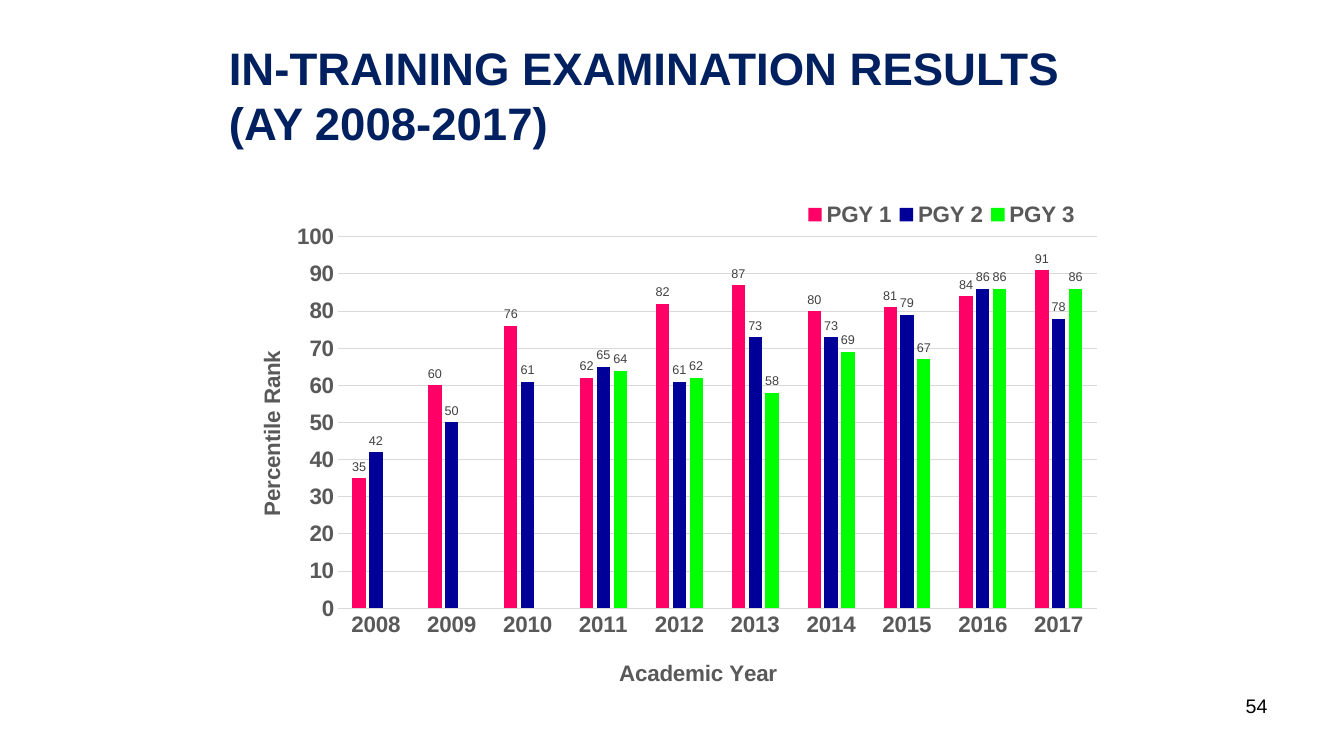
from dataclasses import dataclass

from lxml import etree
from pptx import Presentation
from pptx.chart.data import CategoryChartData
from pptx.dml.color import RGBColor
from pptx.enum.chart import XL_CHART_TYPE, XL_LABEL_POSITION, XL_LEGEND_POSITION, XL_TICK_MARK
from pptx.enum.text import MSO_ANCHOR, PP_ALIGN
from pptx.oxml.ns import qn
from pptx.util import Inches, Pt

CLUSTERED = XL_CHART_TYPE.COLUMN_CLUSTERED
OUTSIDE_END = XL_LABEL_POSITION.OUTSIDE_END
LEGEND_BOTTOM = XL_LEGEND_POSITION.BOTTOM
NO_TICK = XL_TICK_MARK.NONE
BOTTOM, TOP = MSO_ANCHOR.BOTTOM, MSO_ANCHOR.TOP
LEFT, RIGHT = PP_ALIGN.LEFT, PP_ALIGN.RIGHT


@dataclass(frozen=True)
class Theme:
    """Colours and type sizes of the slide."""
    font: str = "Arial"
    heading: str = "002060"
    number: str = "000000"
    axis: str = "595959"
    label: str = "404040"
    grid: str = "D9D9D9"
    heading_size: float = 32.5
    number_size: float = 14
    axis_size: float = 16
    label_size: float = 9


THEME = Theme()
TITLE_LINES = ["IN-TRAINING EXAMINATION RESULTS", "(AY 2008-2017)"]
YEARS = [str(year) for year in range(2008, 2018)]
RESULTS = [
    ("PGY 1", "FF0066", [35, 60, 76, 62, 82, 87, 80, 81, 84, 91]),
    ("PGY 2", "000099", [42, 50, 61, 65, 61, 73, 73, 79, 86, 78]),
    ("PGY 3", "00FF00", [None, None, None, 64, 62, 58, 69, 67, 86, 86]),
]


def style_font(font, size, color, bold=False):
    """Apply the theme typeface with a size, colour and weight."""
    font.name = THEME.font
    font.size = Pt(size)
    font.bold = bold
    font.color.rgb = RGBColor.from_string(color)


def style_line(line):
    """Draw a thin line in the grid colour."""
    line.width = Pt(0.75)
    line.color.rgb = RGBColor.from_string(THEME.grid)


def set_layout(element, index, **settings):
    """Give a chart part a manual layout as fractions of the chart."""
    for old in element.findall(qn("c:layout")):
        element.remove(old)
    layout = etree.Element(qn("c:layout"))
    manual = etree.SubElement(layout, qn("c:manualLayout"))
    for tag, value in settings.items():
        etree.SubElement(manual, qn(f"c:{tag}")).set("val", str(value))
    element.insert(index, layout)


def add_title(slide, left, top, width, height):
    """Place the two-line heading in the title placeholder."""
    title = slide.shapes.title
    title.left, title.top = Inches(left), Inches(top)
    title.width, title.height = Inches(width), Inches(height)
    frame = title.text_frame
    frame.word_wrap = True
    frame.vertical_anchor = BOTTOM
    for index, line in enumerate(TITLE_LINES):
        paragraph = frame.add_paragraph() if index else frame.paragraphs[0]
        paragraph.alignment = LEFT
        paragraph.space_before = Pt(0)
        run = paragraph.add_run()
        run.text = line
        style_font(run.font, THEME.heading_size, THEME.heading, True)


def style_axis(axis, caption, rotation, x, y):
    """Format an axis and place its caption."""
    axis.major_tick_mark = axis.minor_tick_mark = NO_TICK
    style_font(axis.tick_labels.font, THEME.axis_size, THEME.axis, True)
    frame = axis.axis_title.text_frame
    run = frame.paragraphs[0].add_run()
    run.text = caption
    style_font(run.font, THEME.axis_size, THEME.axis, True)
    body = frame._txBody.find(qn("a:bodyPr"))
    body.set("rot", str(rotation * 60000))
    body.set("vert", "horz")
    set_layout(axis.axis_title._element, 1, xMode="edge", yMode="edge", x=x, y=y)


def add_results_chart(slide, left, top, width, height):
    """Place the column chart of percentile ranks by year."""
    data = CategoryChartData()
    data.categories = YEARS
    for name, _, ranks in RESULTS:
        data.add_series(name, ranks)
    chart = slide.shapes.add_chart(
        CLUSTERED, Inches(left), Inches(top), Inches(width), Inches(height), data
    ).chart
    chart.has_title = False
    style_font(chart.font, 10, THEME.number)

    style_axis(chart.category_axis, "Academic Year", 0, 0.44, 0.92)
    style_line(chart.category_axis.format.line)
    ranks_axis = chart.value_axis
    style_axis(ranks_axis, "Percentile Rank", -90, 0.03, 0.42)
    ranks_axis.minimum_scale, ranks_axis.maximum_scale = 0, 100
    ranks_axis.major_unit = 10
    ranks_axis.format.line.fill.background()
    style_line(ranks_axis.major_gridlines.format.line)

    plot = chart.plots[0]
    plot.gap_width, plot.overlap = 219, -27
    plot.vary_by_categories = False
    for series, (_, color, _) in zip(plot.series, RESULTS):
        series.format.fill.solid()
        series.format.fill.fore_color.rgb = RGBColor.from_string(color)
        series.invert_if_negative = False
        labels = series.data_labels
        labels.show_value = True
        labels.position = OUTSIDE_END
        style_font(labels.font, THEME.label_size, THEME.label)

    chart.has_legend = True
    legend = chart.legend
    legend.position = LEGEND_BOTTOM
    legend.include_in_layout = False
    style_font(legend.font, THEME.axis_size, THEME.axis, True)
    set_layout(legend._element, 1, xMode="edge", yMode="edge", x=0.65, y=0.17, w=0.32, h=0.07)
    set_layout(chart._chartSpace.chart.plotArea, 0, layoutTarget="inner",
               xMode="edge", yMode="edge", x=0.126, y=0.241, w=0.86, h=0.604)


def add_page_number(slide, left, top, width, height):
    """Place the right-aligned page number."""
    frame = slide.shapes.add_textbox(
        Inches(left), Inches(top), Inches(width), Inches(height)
    ).text_frame
    frame.word_wrap = True
    frame.vertical_anchor = TOP
    paragraph = frame.paragraphs[0]
    paragraph.alignment = RIGHT
    run = paragraph.add_run()
    run.text = "54"
    style_font(run.font, THEME.number_size, THEME.number)


def main():
    """Build the slide and save it."""
    deck = Presentation()
    deck.slide_width, deck.slide_height = Inches(13.33), Inches(7.5)
    slide = deck.slides.add_slide(deck.slide_layouts[5])
    add_page_number(slide, 9.56, 6.83, 3.11, 0.52)
    add_results_chart(slide, 2.25, 0.88, 8.75, 6.1)
    add_title(slide, 2.17, 0.25, 9, 1.28)
    deck.save("out.pptx")


if __name__ == "__main__":
    main()
